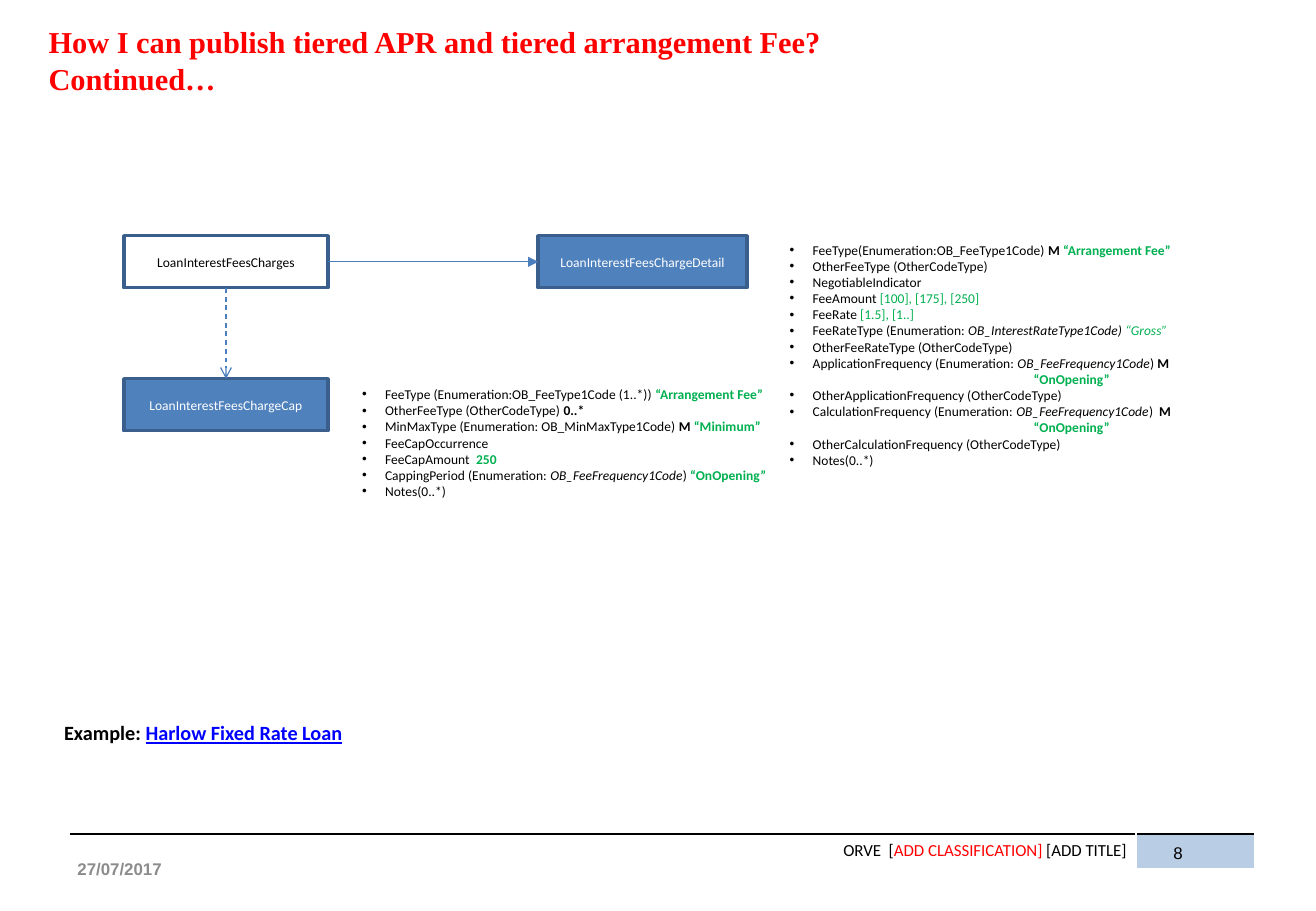
"""Build the slide on publishing tiered APR and tiered arrangement fees."""
from lxml import etree
from pptx import Presentation
from pptx.dml.color import RGBColor
from pptx.enum import dml, shapes, text
from pptx.oxml.ns import qn
from pptx.util import Cm, Pt

rgb = RGBColor.from_string
BLACK, WHITE, RED, GREEN = "000000", "FFFFFF", "FF0000", "00B050"
BLUE, NAVY, GREY, LINK, PALE = "4F81BD", "3A5F8C", "8C8C8C", "0000FF", "B9CDE5"


def add_runs(p, runs, size, font="Calibri"):
    """Add (text, colour, style) runs; style letters are b, i and u."""
    for words, colour, style in runs:
        r = p.add_run()
        r.text = words
        r.font.name, r.font.size = font, Pt(size)
        r.font.color.rgb = rgb(colour)
        r.font.bold, r.font.italic = "b" in style, "i" in style
        r.font.underline = "u" in style


def add_box(left, top, width, height):
    """Add a wrapping text box and return its text frame."""
    tf = s.shapes.add_textbox(Cm(left), Cm(top), Cm(width), Cm(height)).text_frame
    tf.word_wrap = True
    return tf


prs = Presentation()
prs.slide_width, prs.slide_height = Cm(27.51), Cm(19.05)
s = prs.slides.add_slide(prs.slide_layouts[5])

title = s.shapes.title
title.left, title.top, title.width, title.height = Cm(0.76), Cm(0.15), Cm(24.77), Cm(2.21)
tf = title.text_frame
tf.text = "How I can publish tiered APR and tiered arrangement Fee?\vContinued…"
tf.vertical_anchor = text.MSO_ANCHOR.MIDDLE
tf.auto_size = text.MSO_AUTO_SIZE.NONE
p = tf.paragraphs[0]
p.alignment = text.PP_ALIGN.LEFT
for r in p.runs:
    r.font.name, r.font.size, r.font.bold = "Times New Roman", Pt(18), True
    r.font.color.rgb = rgb(RED)

footer = s.shapes.add_table(1, 2, Cm(1.45), Cm(17.44), Cm(24.77), Cm(0.72)).table
footer.first_row = footer.horz_banding = False
footer.columns[0].width, footer.columns[1].width = Cm(22.3), Cm(2.47)
label, number = footer.cell(0, 0), footer.cell(0, 1)
label.fill.background()
number.fill.solid()
number.fill.fore_color.rgb = rgb(PALE)
for cell in (label, number):
    cell.margin_left = cell.margin_right = Cm(0.2)
    border = etree.Element(qn("a:lnT"), w=str(Pt(1)))
    fill = etree.SubElement(border, qn("a:solidFill"))
    etree.SubElement(fill, qn("a:srgbClr"), val=BLACK)
    cell._tc.get_or_add_tcPr().insert(0, border)
p = label.text_frame.paragraphs[0]
p.alignment = text.PP_ALIGN.RIGHT
add_runs(p, [("ORVE  [", BLACK, ""), ("ADD CLASSIFICATION] ", RED, ""),
             ("[ADD TITLE]", BLACK, "")], 10)
etree.SubElement(number.text_frame.paragraphs[0]._p, qn("a:endParaRPr"), sz="1000")

tf = add_box(1.37, 17.65, 6.43, 1.02)
tf.vertical_anchor = text.MSO_ANCHOR.MIDDLE
add_runs(tf.paragraphs[0], [("27/07/2017", GREY, "b")], 10, "Arial")
tf = add_box(24.28, 17.5, 2.69, 1.02)
add_runs(tf.paragraphs[0], [("8", BLACK, "")], 10, "Arial")
tf = add_box(1.09, 14.94, 13.64, 0.77)
add_runs(tf.paragraphs[0], [("Example: ", BLACK, "b"),
                            ("Harlow Fixed Rate Loan", LINK, "bu")], 12)

boxes = []
for name, left, top, width, fill, colour in [
    ("LoanInterestFeesCharges", 2.59, 4.93, 4.27, None, BLACK),
    ("LoanInterestFeesChargeDetail", 11.25, 4.93, 4.37, BLUE, WHITE),
    ("LoanInterestFeesChargeCap", 2.59, 7.92, 4.27, BLUE, WHITE),
]:
    sp = s.shapes.add_shape(shapes.MSO_SHAPE.RECTANGLE, Cm(left), Cm(top), Cm(width), Cm(1.09))
    sp.shadow.inherit = False
    if fill:
        sp.fill.solid()
        sp.fill.fore_color.rgb = rgb(fill)
    else:
        sp.fill.background()
    sp.line.color.rgb, sp.line.width = rgb(NAVY), Pt(2)
    tf = sp.text_frame
    tf.vertical_anchor = text.MSO_ANCHOR.MIDDLE
    tf.paragraphs[0].alignment = text.PP_ALIGN.CENTER
    add_runs(tf.paragraphs[0], [(name, colour, "")], 8)
    boxes.append(sp)

charges, detail, cap = boxes
for target, start, end, head, dash in [(cap, 2, 0, "arrow", dml.MSO_LINE.DASH),
                                       (detail, 3, 1, "triangle", dml.MSO_LINE.SOLID)]:
    line = s.shapes.add_connector(shapes.MSO_CONNECTOR.STRAIGHT, 0, 0, 0, 0)
    line.begin_connect(charges, start)
    line.end_connect(target, end)
    line.line.color.rgb, line.line.width = rgb("4B7EBC"), Pt(0.75)
    line.line.dash_style = dash
    etree.SubElement(line.line._get_or_add_ln(), qn("a:tailEnd"), type=head)
    etree.SubElement(line._element.spPr, qn("a:effectLst"))

on_opening = [("“OnOpening”", GREEN, "b")]
detail_fields = [
    [("FeeType(Enumeration:OB_FeeType1Code) ", BLACK, ""), ("M ", BLACK, "b"),
     ("“Arrangement Fee”", GREEN, "b")],
    [("OtherFeeType (OtherCodeType)", BLACK, "")],
    [("NegotiableIndicator", BLACK, "")],
    [("FeeAmount ", BLACK, ""), ("[100], [175], [250]", GREEN, "")],
    [("FeeRate ", BLACK, ""), ("[1.5], [1..]", GREEN, "")],
    [("FeeRateType (Enumeration: ", BLACK, ""), ("OB_InterestRateType1Code) ", BLACK, "i"),
     ("“Gross”", GREEN, "i")],
    [("OtherFeeRateType (OtherCodeType)", BLACK, "")],
    [("ApplicationFrequency (Enumeration: ", BLACK, ""), ("OB_FeeFrequency1Code", BLACK, "i"),
     (") ", BLACK, ""), ("M", BLACK, "b")],
    on_opening,
    [("OtherApplicationFrequency (OtherCodeType)", BLACK, "")],
    [("CalculationFrequency (Enumeration: ", BLACK, ""), ("OB_FeeFrequency1Code", BLACK, "i"),
     (")  ", BLACK, ""), ("M", BLACK, "b")],
    on_opening,
    [("OtherCalculationFrequency (OtherCodeType)", BLACK, "")],
    [("Notes(0..*)", BLACK, "")],
]
cap_fields = [
    [("FeeType (Enumeration:OB_FeeType1Code (1..*)) ", BLACK, ""),
     ("“Arrangement Fee”", GREEN, "b")],
    [("OtherFeeType (OtherCodeType) ", BLACK, ""), ("0..*", BLACK, "b")],
    [("MinMaxType (Enumeration: OB_MinMaxType1Code) ", BLACK, ""), ("M ", BLACK, "b"),
     ("“Minimum”", GREEN, "b")],
    [("FeeCapOccurrence", BLACK, "")],
    [("FeeCapAmount  ", BLACK, ""), ("250", GREEN, "b")],
    [("CappingPeriod (Enumeration:", BLACK, ""), (" OB_FeeFrequency1Code", BLACK, "i"),
     (")", BLACK, ""), (" “OnOpening”", GREEN, "b")],
    [("Notes(0..*)", BLACK, "")],
]
for fields, left, top, width, height in [(detail_fields, 16.26, 4.93, 8.59, 5.05),
                                         (cap_fields, 7.32, 7.95, 9.02, 2.64)]:
    tf = add_box(left, top, width, height)
    tf.word_wrap = False
    tf.auto_size = text.MSO_AUTO_SIZE.SHAPE_TO_FIT_TEXT
    for i, runs in enumerate(fields):
        p = tf.add_paragraph() if i else tf.paragraphs[0]
        pPr = p._p.get_or_add_pPr()
        if runs is on_opening:
            pPr.set("marL", str(Cm(5.1)))
            pPr.set("indent", "0")
        else:
            pPr.set("marL", str(Cm(0.48)))
            pPr.set("indent", str(-Cm(0.48)))
            etree.SubElement(pPr, qn("a:buFont"), typeface="Arial")
            etree.SubElement(pPr, qn("a:buChar"), char="•")
        add_runs(p, runs, 8)

prs.save("out.pptx")
